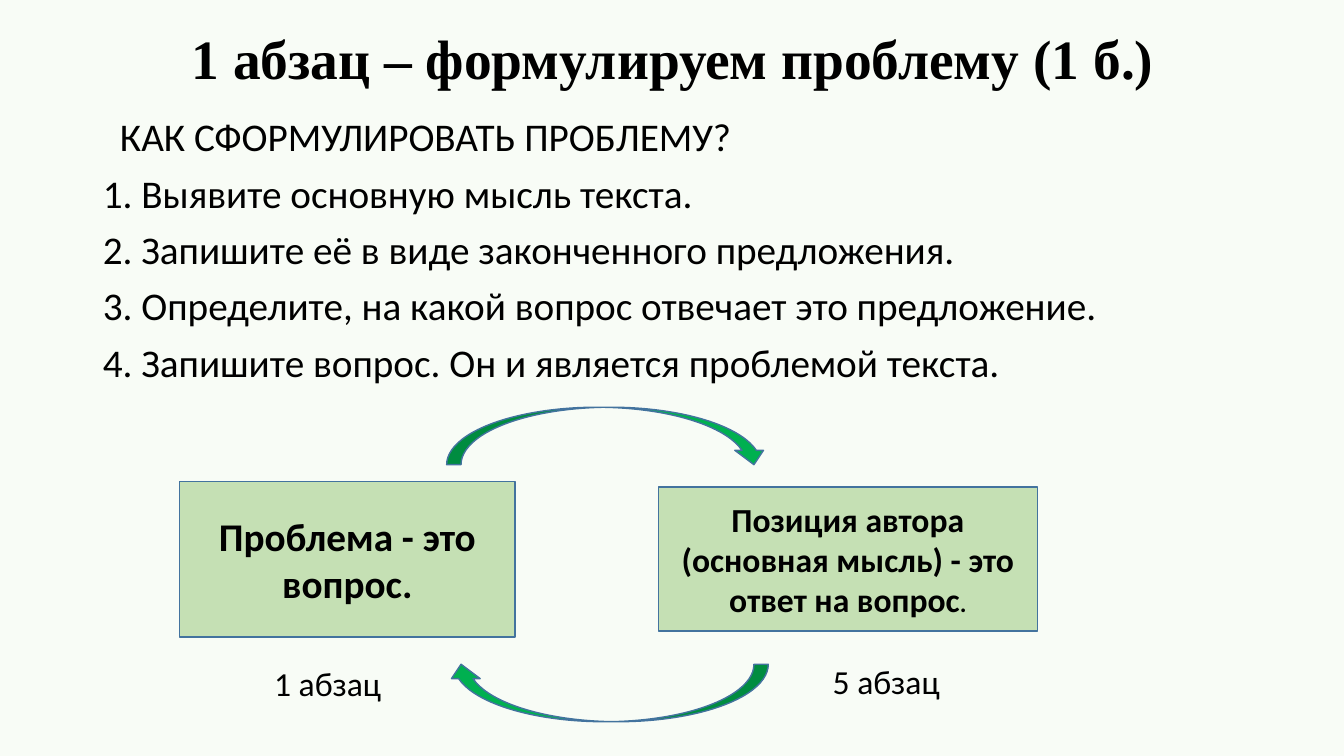
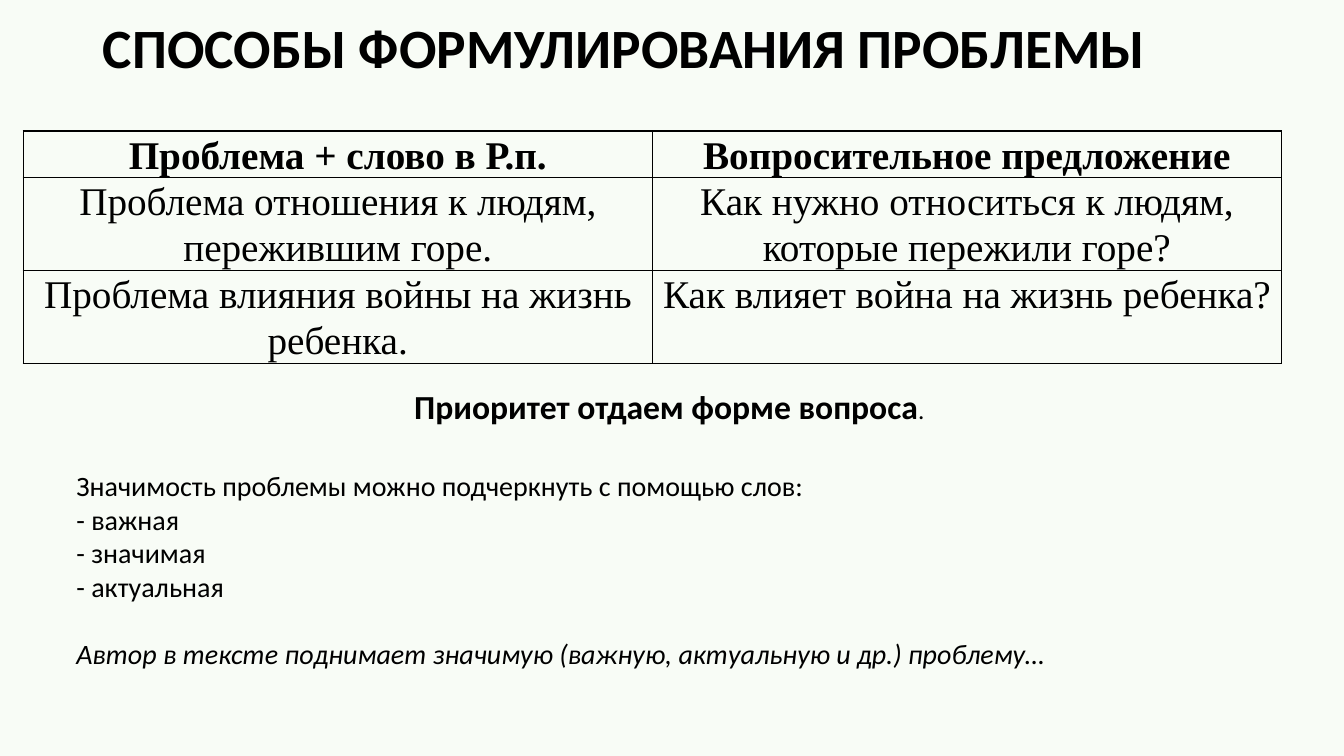
from lxml.etree import SubElement
from pptx import Presentation
from pptx.dml.color import RGBColor
from pptx.enum.shapes import MSO_SHAPE
from pptx.enum.text import MSO_ANCHOR, MSO_AUTO_SIZE, PP_ALIGN
from pptx.oxml.ns import qn
from pptx.util import Inches, Pt

COLORS = {"paper": "F8FCF6", "ink": "000000", "box": "C5E0B4",
          "edge": "43739E", "arrow": "00B050"}
SANS, SERIF = "Calibri", "Times New Roman"

STEPS_TITLE = "1 абзац – формулируем проблему (1 б.)"
STEPS = [
    "КАК СФОРМУЛИРОВАТЬ ПРОБЛЕМУ?",
    "1. Выявите основную мысль текста.",
    "2. Запишите её в виде законченного предложения.",
    "3. Определите, на какой вопрос отвечает это предложение.",
    "4. Запишите вопрос. Он и является проблемой текста.",
]
BOXES = [
    ((1.78, 4.78, 3.33, 1.54), [("Проблема - это вопрос.", 28, True)]),
    ((6.53, 4.83, 3.76, 1.43),
     [("Позиция автора (основная мысль) - это ответ на вопрос", 24, True),
      (".", 18, True)]),
]
ARROWS = [((4.43, 4.04, 3.19, 0.57), 0), ((4.43, 6.59, 3.19, 0.57), 180)]
CAPTIONS = [((2.62, 6.53, 1.27, 0.5), "1 абзац"),
            ((8.16, 6.51, 1.35, 0.5), "5 абзац")]

WAYS_TITLE = "СПОСОБЫ ФОРМУЛИРОВАНИЯ ПРОБЛЕМЫ"
WAYS = [
    ("Проблема + слово в Р.п.", "Вопросительное предложение"),
    ("Проблема отношения к людям, пережившим горе.",
     "Как нужно относиться к людям, которые пережили горе?"),
    ("Проблема влияния войны на жизнь ребенка.",
     "Как влияет война на жизнь ребенка?"),
]
ROW_HEIGHTS = [0.46, 0.92, 0.92]
PRIORITY = [("Приоритет отдаем форме вопроса", 24, True), (".", 18, False)]
EMPHASIS = ["Значимость проблемы можно подчеркнуть с помощью слов:",
            "- важная", "- значимая", "- актуальная"]
EXAMPLE = "Автор в тексте поднимает значимую (важную, актуальную и др.) проблему…"


def color(name):
    return RGBColor.from_string(COLORS[name])


def inches(place):
    return [Inches(v) for v in place]


def add_run(p, text, size, font=SANS, bold=False, italic=False):
    r = p.add_run()
    r.text = text
    r.font.name, r.font.size = font, Pt(size)
    r.font.bold, r.font.italic = bold, italic
    r.font.color.rgb = color("ink")


def next_paragraph(tf, i):
    return tf.add_paragraph() if i else tf.paragraphs[0]


def move(sp, place):
    sp.left, sp.top, sp.width, sp.height = inches(place)


def set_title(s, text, place, font, align, spacing):
    sp = s.shapes.title
    move(sp, place)
    tf = sp.text_frame
    tf.auto_size, tf.vertical_anchor = MSO_AUTO_SIZE.NONE, MSO_ANCHOR.MIDDLE
    p = tf.paragraphs[0]
    p.alignment, p.line_spacing = align, spacing
    add_run(p, text, 39.6, font, bold=True)


def add_figure(s, kind, place, fill):
    sp = s.shapes.add_shape(kind, *inches(place))
    sp.shadow.inherit = False
    sp.fill.solid()
    sp.fill.fore_color.rgb = color(fill)
    sp.line.color.rgb = color("edge")
    sp.line.width = Pt(1)
    return sp


def add_text(s, place, wrap=False):
    tf = s.shapes.add_textbox(*inches(place)).text_frame
    tf.word_wrap = wrap
    return tf


def add_borders(cell):
    props = cell._tc.get_or_add_tcPr()
    for i, side in enumerate(("lnL", "lnR", "lnT", "lnB")):
        ln = SubElement(props, qn("a:" + side), w=str(Pt(1)))
        fill = SubElement(ln, qn("a:solidFill"))
        SubElement(fill, qn("a:srgbClr"), val=COLORS["ink"])
        props.remove(ln)
        props.insert(i, ln)


def build_steps(prs):
    s = prs.slides.add_slide(prs.slide_layouts[1])
    set_title(s, STEPS_TITLE, (0.92, 0.15, 11.5, 0.79), SERIF,
              PP_ALIGN.CENTER, 1.07)
    body = s.placeholders[1]
    move(body, (0.92, 1.12, 11.5, 5.53))
    tf = body.text_frame
    tf.auto_size = MSO_AUTO_SIZE.NONE
    for i, text in enumerate(STEPS):
        p = next_paragraph(tf, i)
        p.line_spacing, p.space_before = 0.9, Pt(10)
        props = p._p.get_or_add_pPr()
        props.set("marL", str(Inches(0 if i else 0.17)))
        props.set("indent", "0")
        SubElement(props, qn("a:buNone"))
        add_run(p, text, 28)
    for place, runs in BOXES:
        tf = add_figure(s, MSO_SHAPE.RECTANGLE, place, "box").text_frame
        tf.word_wrap, tf.vertical_anchor = True, MSO_ANCHOR.MIDDLE
        p = tf.paragraphs[0]
        p.alignment = PP_ALIGN.CENTER
        for text, size, bold in runs:
            add_run(p, text, size, bold=bold)
    for place, turn in ARROWS:
        add_figure(s, MSO_SHAPE.CURVED_DOWN_ARROW, place, "arrow").rotation = turn
    for place, text in CAPTIONS:
        add_run(add_text(s, place).paragraphs[0], text, 24)


def build_ways(prs):
    s = prs.slides.add_slide(prs.slide_layouts[5])
    set_title(s, WAYS_TITLE, (0.92, 0.09, 11.5, 0.82), SANS,
              PP_ALIGN.LEFT, 0.9)
    place = (0.23, 1.3, 12.48, sum(ROW_HEIGHTS))
    table = s.shapes.add_table(len(WAYS), 2, *inches(place)).table
    table.first_row = table.horz_banding = False
    for i, (texts, height) in enumerate(zip(WAYS, ROW_HEIGHTS)):
        table.rows[i].height = Inches(height)
        for j, text in enumerate(texts):
            cell = table.cell(i, j)
            cell.fill.background()
            cell.margin_left = cell.margin_right = Inches(0.07)
            cell.margin_top = cell.margin_bottom = 0
            add_borders(cell)
            p = cell.text_frame.paragraphs[0]
            p.alignment, p.line_spacing = PP_ALIGN.CENTER, 1.07
            add_run(p, text, 28, SERIF, bold=i == 0)
    p = add_text(s, (4.01, 3.78, 5.31, 0.5)).paragraphs[0]
    for text, size, bold in PRIORITY:
        add_run(p, text, size, bold=bold)
    tf = add_text(s, (0.66, 4.6, 12.26, 2.42), wrap=True)
    for i, text in enumerate(EMPHASIS):
        add_run(next_paragraph(tf, i), text, 20)
    p = tf.add_paragraph()
    p.space_before = Pt(24)
    add_run(p, EXAMPLE, 20, italic=True)


def main():
    prs = Presentation()
    prs.slide_width, prs.slide_height = Inches(13.33), Inches(7.5)
    fill = prs.slide_master.background.fill
    fill.solid()
    fill.fore_color.rgb = color("paper")
    build_steps(prs)
    build_ways(prs)
    prs.save("out.pptx")


if __name__ == "__main__":
    main()
